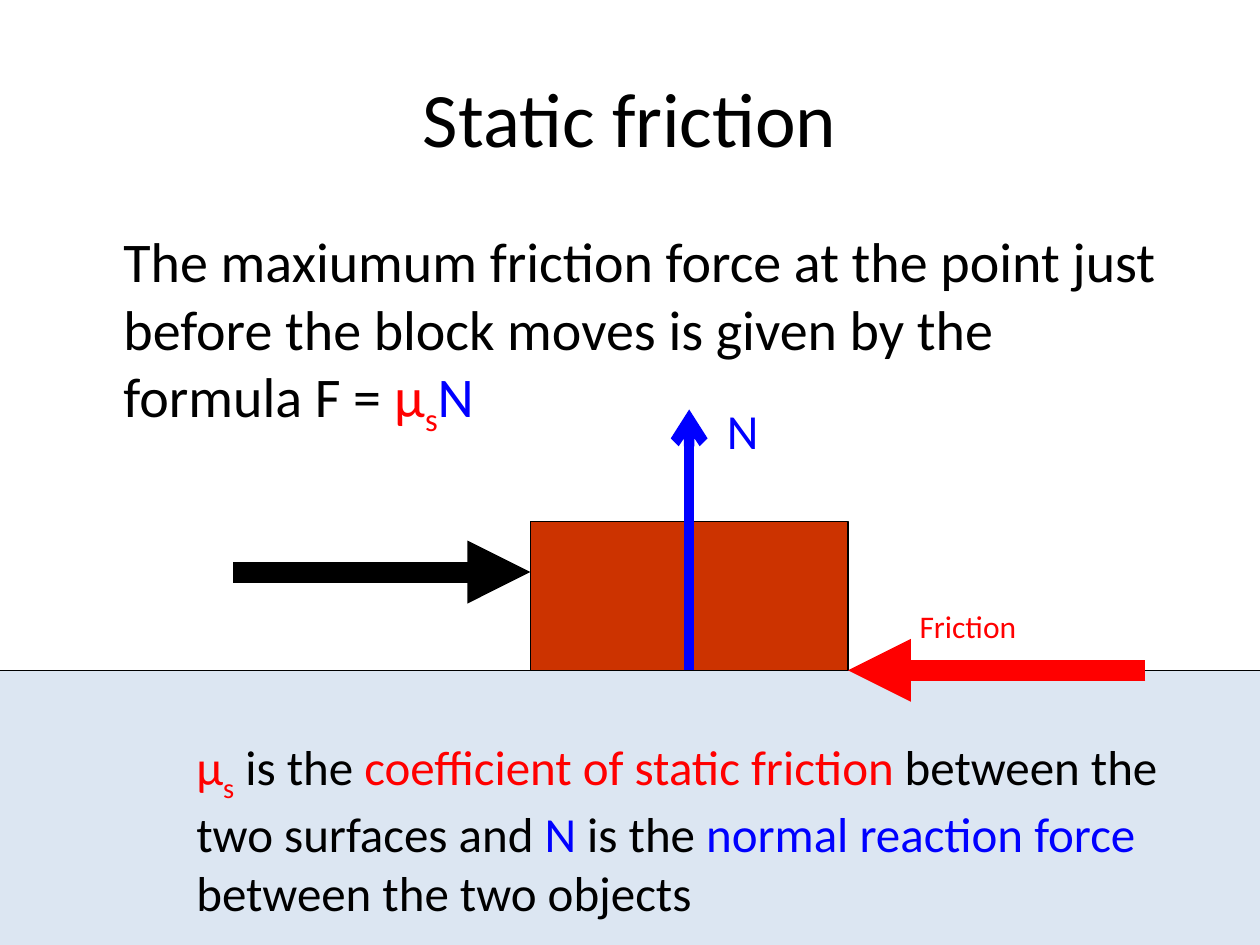
import dataclasses

import lxml.etree
import pptx
import pptx.dml.color
import pptx.enum.shapes
import pptx.enum.text
import pptx.oxml.ns
import pptx.util
from pptx.util import Inches


@dataclasses.dataclass(frozen=True)
class Theme:
    """Colours, type sizes and line weights of the deck."""
    font: str = "Calibri"
    ink: str = "000000"
    friction: str = "FF0000"
    normal: str = "0000FF"
    ground: str = "DCE6F2"
    block: str = "CC3300"
    title: int = 44
    body: int = 32
    note: int = 28
    label: int = 18
    outline: float = 0.75
    thick: int = 12
    medium: int = 6


THEME = Theme()


def rgb(colour):
    """Return a colour object for a hexadecimal string."""
    return pptx.dml.color.RGBColor.from_string(colour)


def add_spans(para, size, spans):
    """Add (text, colour) runs to a paragraph; a third item marks a subscript."""
    para.space_before = pptx.util.Pt(0)
    for text, colour, *subscript in spans:
        span = para.add_run()
        span.text = text
        span.font.name = THEME.font
        span.font.size = pptx.util.Pt(size)
        span.font.color.rgb = rgb(colour)
        if subscript:
            span.font._element.set("baseline", "-25000")


def place(shape, box):
    """Move and size a shape to a box given in inches."""
    shape.left, shape.top, shape.width, shape.height = map(Inches, box)


def add_text(page, box, size, spans):
    """Add a wrapping text box holding one paragraph."""
    shape = page.shapes.add_textbox(*map(Inches, box))
    shape.text_frame.word_wrap = True
    add_spans(shape.text_frame.paragraphs[0], size, spans)


def add_block(page, box, colour):
    """Add a filled rectangle with a thin outline."""
    shape = page.shapes.add_shape(
        pptx.enum.shapes.MSO_SHAPE.RECTANGLE, *map(Inches, box))
    shape.shadow.inherit = False
    shape.fill.solid()
    shape.fill.fore_color.rgb = rgb(colour)
    shape.line.color.rgb = rgb(THEME.ink)
    shape.line.width = pptx.util.Pt(THEME.outline)
    return shape


def add_arrow(page, start, end, colour, weight, head="triangle"):
    """Add a straight arrow between two points given in inches."""
    arrow = page.shapes.add_connector(
        pptx.enum.shapes.MSO_CONNECTOR.STRAIGHT, *map(Inches, start + end))
    arrow.line.color.rgb = rgb(colour)
    arrow.line.width = pptx.util.Pt(weight)
    qn = pptx.oxml.ns.qn
    lxml.etree.SubElement(arrow.line._get_or_add_ln(), qn("a:tailEnd"), type=head)
    lxml.etree.SubElement(arrow._element.spPr, qn("a:effectLst"))
    return arrow


def fill_title(page, box):
    """Write the slide title."""
    title = page.shapes.title
    place(title, box)
    title.text_frame.vertical_anchor = pptx.enum.text.MSO_ANCHOR.MIDDLE
    para = title.text_frame.paragraphs[0]
    para.alignment = pptx.enum.text.PP_ALIGN.CENTER
    add_spans(para, THEME.title, [("Static friction", THEME.ink)])


def fill_body(page, box):
    """Write the friction formula as an indented paragraph without a bullet."""
    body = page.placeholders[1]
    place(body, box)
    para = body.text_frame.paragraphs[0]
    properties = para._p.get_or_add_pPr()
    properties.set("marL", str(Inches(0.38)))
    properties.set("indent", "0")
    lxml.etree.SubElement(properties, pptx.oxml.ns.qn("a:buNone"))
    add_spans(para, THEME.body, [
        ("The maxiumum friction force at the point just before the block "
         "moves is given by the formula F = ", THEME.ink),
        ("μ", THEME.friction),
        ("s", THEME.friction, True),
        ("N", THEME.normal),
    ])


def draw_ground(page, box):
    """Draw the ground and the note explaining the symbols."""
    left, top, width, height = box
    add_block(page, box, THEME.ground)
    add_text(page, (left + 1.66, top + 0.48, 8.11, 1.5), THEME.note, [
        ("μ", THEME.friction),
        ("s", THEME.friction, True),
        (" is the ", THEME.ink),
        ("coefficient of static friction", THEME.friction),
        (" between the two surfaces and ", THEME.ink),
        ("N", THEME.normal),
        (" is the ", THEME.ink),
        ("normal reaction force", THEME.normal),
        (" between the two objects", THEME.ink),
    ])


def draw_forces(page, box):
    """Draw the block and the three forces that act on it."""
    left, top, width, height = box
    right, bottom, centre = left + width, top + height, left + width / 2
    push = top + 0.4
    reach = 2.36
    block = add_block(page, box, THEME.block)
    add_arrow(page, (left - reach, push), (left, push), THEME.ink, THEME.thick)
    add_arrow(page, (right + reach, bottom), (right, bottom),
              THEME.friction, THEME.thick)
    normal = add_arrow(page, (centre, bottom), (centre, bottom - 2.07),
                       THEME.normal, THEME.medium, "arrow")
    normal.begin_connect(block, 2)
    add_text(page, (right + 0.47, bottom - 0.55, 1.73, 0.4), THEME.label,
             [("Friction", THEME.friction)])
    add_text(page, (centre + 0.2, top - 1.01, 0.35, 0.57), THEME.note,
             [("N", THEME.normal)])


def main():
    """Build and save the deck."""
    deck = pptx.Presentation()
    deck.slide_width, deck.slide_height = Inches(10), Inches(7.5)
    page = deck.slides.add_slide(deck.slide_layouts[1])
    fill_title(page, (0.5, 0.3, 9, 1.25))
    fill_body(page, (0.5, 1.75, 9, 4.95))
    draw_ground(page, (-0.2, 5.32, 10.4, 2.28))
    draw_forces(page, (4.21, 4.14, 2.52, 1.18))
    deck.save("out.pptx")


if __name__ == "__main__":
    main()
